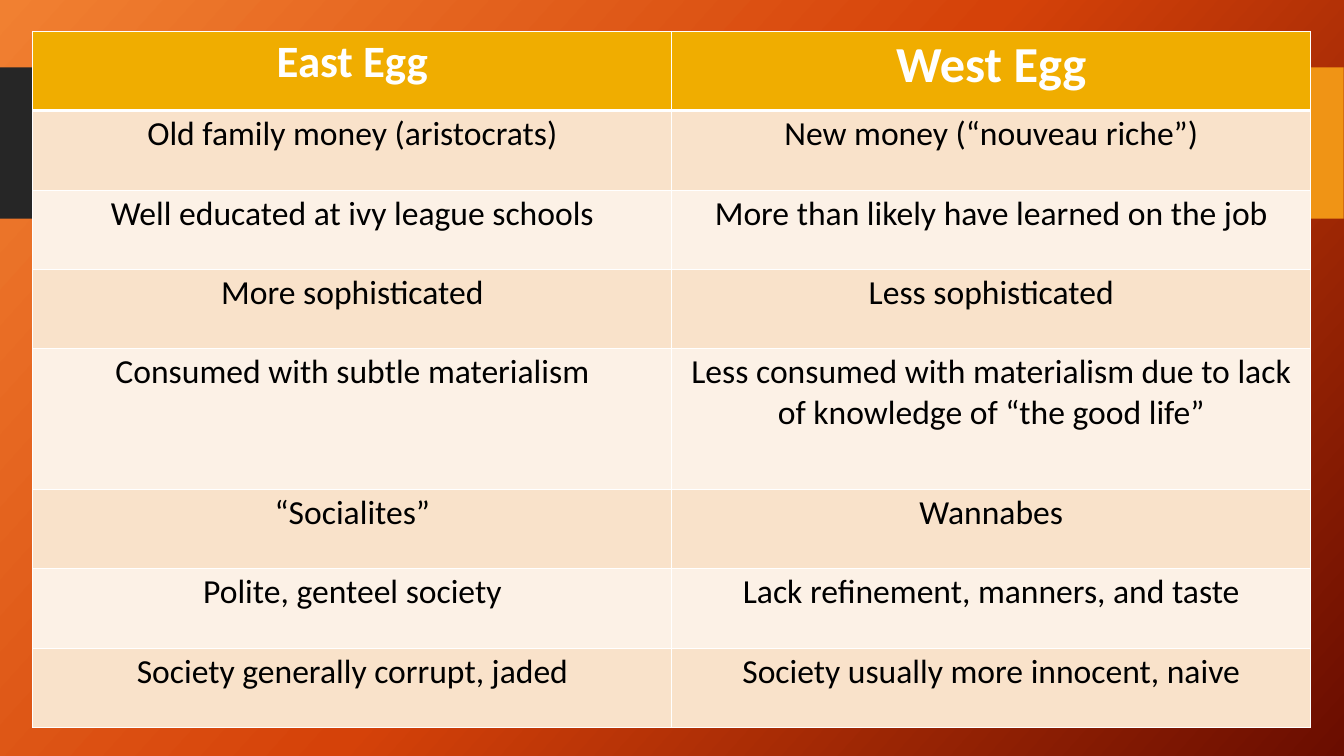
from copy import deepcopy
from dataclasses import dataclass

from lxml import etree
from pptx import Presentation
from pptx.dml.color import RGBColor
from pptx.enum import shapes, text
from pptx.oxml.ns import qn
from pptx.util import Cm, Pt


@dataclass(frozen=True)
class Theme:
    font: str = "Calibri"
    glow: tuple = ((0, "F18031"), (0.5, "D54209"), (1, "6A0D00"))
    angle: int = 42
    dark: str = "262626"
    amber: str = "F09415"
    head: str = "F0AD00"
    bands: tuple = ("F9E2CA", "FCF1E6")
    white: str = "FFFFFF"
    black: str = "000000"
    heads: tuple = (32, 36)
    body: int = 24
    thin: float = 0.8
    thick: float = 2.4


@dataclass(frozen=True)
class Bar:
    left: float
    width: float
    color: str


@dataclass(frozen=True)
class Look:
    fill: str
    ink: str
    size: int
    bold: bool
    top: float
    base: float


THEME = Theme()
BARS = (Bar(0, 28.98, THEME.dark), Bar(29.41, 4.45, THEME.amber))
ROWS = (
    ("East Egg", "West Egg"),
    ("Old family money (aristocrats)", "New money (“nouveau riche”)"),
    ("Well educated at ivy league schools",
     "More than likely have learned on the job"),
    ("More sophisticated", "Less sophisticated"),
    ("Consumed with subtle materialism",
     "Less consumed with materialism due to lack of knowledge of “the good life”"),
    ("“Socialites”", "Wannabes"),
    ("Polite, genteel society", "Lack refinement, manners, and taste"),
    ("Society generally corrupt, jaded", "Society usually more innocent, naive"),
)
TALL = 4
STEP, HIGH, WIDE = 2.0, 3.54, 16.1


def rgb(code: str) -> RGBColor:
    return RGBColor.from_string(code)


def paint_back(slide) -> None:
    fill = slide.background.fill
    fill.gradient()
    fill.gradient_angle = 360 - THEME.angle
    stops = slide.element.find(".//" + qn("a:gsLst"))
    stops.insert(1, deepcopy(stops[0]))
    for stop, (spot, code) in zip(fill.gradient_stops, THEME.glow):
        stop.position = spot
        stop.color.rgb = rgb(code)


def draw_bar(slide, bar: Bar) -> None:
    box = slide.shapes.add_shape(
        shapes.MSO_SHAPE.RECTANGLE,
        Cm(bar.left), Cm(1.7), Cm(bar.width), Cm(3.81))
    box.shadow.inherit = False
    box.fill.solid()
    box.fill.fore_color.rgb = rgb(bar.color)
    box.line.fill.background()


def edge(cell, side: str, width: float) -> None:
    """Draw one white border; side is L, R, T or B."""
    props = cell._tc.get_or_add_tcPr()
    line = etree.SubElement(props, qn("a:ln" + side), w=str(Pt(width)))
    solid = etree.SubElement(line, qn("a:solidFill"))
    etree.SubElement(solid, qn("a:srgbClr"), val=THEME.white)


def look_of(row: int, col: int) -> Look:
    if row == 0:
        return Look(THEME.head, THEME.white, THEME.heads[col], True,
                    THEME.thin, THEME.thick)
    top = THEME.thick if row == 1 else THEME.thin
    return Look(THEME.bands[(row - 1) % 2], THEME.black, THEME.body, False,
                top, THEME.thin)


def fill_cell(cell, words: str, look: Look) -> None:
    cell.margin_left = cell.margin_right = Cm(0.2)
    cell.margin_top = cell.margin_bottom = Cm(0.08)
    for side, width in (("L", THEME.thin), ("R", THEME.thin),
                        ("T", look.top), ("B", look.base)):
        edge(cell, side, width)
    cell.fill.solid()
    cell.fill.fore_color.rgb = rgb(look.fill)
    para = cell.text_frame.paragraphs[0]
    para.alignment = text.PP_ALIGN.CENTER
    run = para.add_run()
    run.text = words
    run.font.name = THEME.font
    run.font.size = Pt(look.size)
    run.font.bold = look.bold
    run.font.color.rgb = rgb(look.ink)


def draw_table(slide) -> None:
    highs = [HIGH if row == TALL else STEP for row in range(len(ROWS))]
    table = slide.shapes.add_table(
        len(ROWS), 2, Cm(0.83), Cm(0.79), Cm(2 * WIDE), Cm(sum(highs))).table
    for col in table.columns:
        col.width = Cm(WIDE)
    for row, (pair, high) in enumerate(zip(ROWS, highs)):
        table.rows[row].height = Cm(high)
        for col, words in enumerate(pair):
            fill_cell(table.cell(row, col), words, look_of(row, col))


def main() -> None:
    deck = Presentation()
    deck.slide_width, deck.slide_height = Cm(33.87), Cm(19.05)
    slide = deck.slides.add_slide(deck.slide_layouts[6])
    paint_back(slide)
    for bar in BARS:
        draw_bar(slide, bar)
    draw_table(slide)
    deck.save("out.pptx")


if __name__ == "__main__":
    main()
